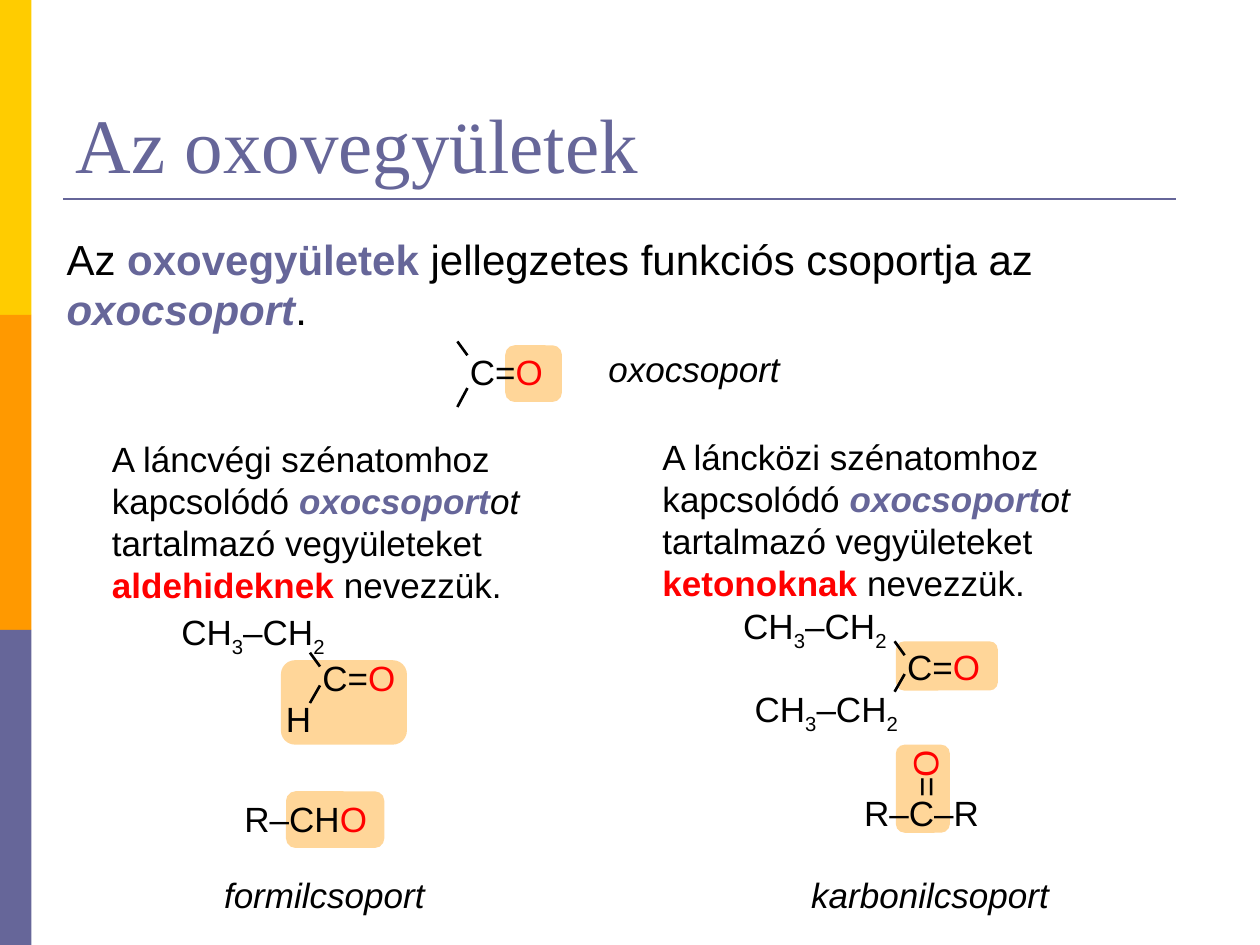
from pptx import Presentation
from pptx.dml.color import RGBColor
from pptx.enum.shapes import MSO_CONNECTOR, MSO_SHAPE
from pptx.enum.text import MSO_ANCHOR, MSO_AUTO_SIZE, PP_ALIGN
from pptx.util import Pt
from lxml.etree import SubElement
from pptx.oxml.ns import qn

PX = 9144
VIOLET, YELLOW, ORANGE, PEACH = "666699", "FFCC00", "FF9900", "FFD699"
RED, BLACK = "FF0000", "000000"


def color(value):
    return RGBColor.from_string(value)


def write(paragraph, text, size=20, font="Arial", ink=BLACK, bold=False, italic=False, subscript=False):
    run = paragraph.add_run()
    run.text = text
    run.font.size = Pt(size)
    run.font.name = font
    run.font.color.rgb = color(ink)
    run.font.bold = bold
    run.font.italic = italic
    if subscript:
        run._r.get_or_add_rPr().set("baseline", "-25000")


presentation = Presentation()
presentation.slide_width = 1000 * PX
presentation.slide_height = 750 * PX
slide = presentation.slides.add_slide(presentation.slide_layouts[5])

title = slide.shapes.title
title.left, title.top, title.width, title.height = 50 * PX, 30 * PX, 900 * PX, 125 * PX
title.text_frame.vertical_anchor = MSO_ANCHOR.BOTTOM
title.text_frame.auto_size = MSO_AUTO_SIZE.NONE
heading = title.text_frame.paragraphs[0]
heading.alignment = PP_ALIGN.LEFT
write(heading, "Az oxovegyületek", size=44, font="Times New Roman", ink=VIOLET)

bands = [
    (MSO_SHAPE.RECTANGLE, 0, 250 * row, 25, 250, fill)
    for row, fill in enumerate([YELLOW, ORANGE, VIOLET])
]
highlights = [
    (MSO_SHAPE.ROUNDED_RECTANGLE, *place, PEACH)
    for place in [
        (401, 274, 45, 45),
        (223, 524, 100, 67),
        (227, 628, 78, 45),
        (711, 509, 81, 39),
        (711, 591, 43, 70),
    ]
]
for preset, left, top, width, height, fill in bands + highlights:
    area = slide.shapes.add_shape(preset, left * PX, top * PX, width * PX, height * PX)
    area.shadow.inherit = False
    area.fill.solid()
    area.fill.fore_color.rgb = color(fill)
    area.line.fill.background()

strokes = [(50, 158, 933, 158, VIOLET)]
for left, upper_start, upper_end, lower_start, lower_end in [
    (363, 282, 271, 308, 323),
    (246, 529, 518, 544, 558),
    (710, 520, 509, 535, 549),
]:
    strokes.append((left + 8, upper_start, left, upper_end, BLACK))
    strokes.append((left + 8, lower_start, left, lower_end, BLACK))
for start_x, start_y, end_x, end_y, ink in strokes:
    bond = slide.shapes.add_connector(
        MSO_CONNECTOR.STRAIGHT, start_x * PX, start_y * PX, end_x * PX, end_y * PX
    )
    bond.line.color.rgb = color(ink)
    bond.line.width = Pt(1.5)
    SubElement(bond._element.spPr, qn("a:effectLst"))

plain = {}
large = {"size": 24}
slanted = {"italic": True}
red = {"ink": RED}
term = {"ink": VIOLET, "bold": True, "italic": True}
lowered = {"subscript": True}

oxo = [("C=", plain), ("O", red)]
ethyl = [("CH", plain), ("3", lowered), ("–CH", plain), ("2", lowered)]
intro = [
    ("Az ", large),
    ("oxovegyületek", {"size": 24, "ink": VIOLET, "bold": True}),
    (" jellegzetes funkciós csoportja az ", large),
    ("oxocsoport", {**term, "size": 24}),
    (".", large),
]
aldehydes, ketones = [
    [
        (f"A {position} szénatomhoz kapcsolódó ", plain),
        ("oxocsoport", term),
        ("ot", slanted),
        (" tartalmazó vegyületeket ", plain),
        (family, {"ink": RED, "bold": True}),
        (" nevezzük.", plain),
    ]
    for position, family in [("láncvégi", "aldehideknek"), ("láncközi", "ketonoknak")]
]

texts = [
    (43, 180, 912, 91, True, 0, intro),
    (363, 273, 79, 44, False, 0, oxo),
    (473, 271, 157, 44, False, 0, [("oxocsoport", slanted)]),
    (79, 342, 451, 145, True, 0, aldehydes),
    (134, 480, 138, 44, False, 0, ethyl),
    (246, 516, 79, 44, False, 0, oxo),
    (217, 549, 41, 44, False, 0, [("H", plain)]),
    (184, 628, 119, 44, False, 0, [("R–CH", plain), ("O", red)]),
    (168, 688, 181, 44, False, 0, [("formilcsoport", slanted)]),
    (516, 341, 423, 145, True, 0, ketones),
    (580, 475, 138, 44, False, 0, ethyl),
    (710, 507, 79, 44, False, 0, oxo),
    (589, 541, 138, 44, False, 0, ethyl),
    (705, 592, 58, 44, False, 270, [("=", plain), ("O", red)]),
    (676, 623, 112, 44, False, 0, [("R–C–R", plain)]),
    (634, 688, 210, 44, False, 0, [("karbonilcsoport", slanted)]),
]
for left, top, width, height, wraps, turn, parts in texts:
    label = slide.shapes.add_textbox(left * PX, top * PX, width * PX, height * PX)
    label.rotation = turn
    label.text_frame.word_wrap = wraps
    label.text_frame.auto_size = MSO_AUTO_SIZE.SHAPE_TO_FIT_TEXT
    for text, style in parts:
        write(label.text_frame.paragraphs[0], text, **style)

presentation.save("out.pptx")
